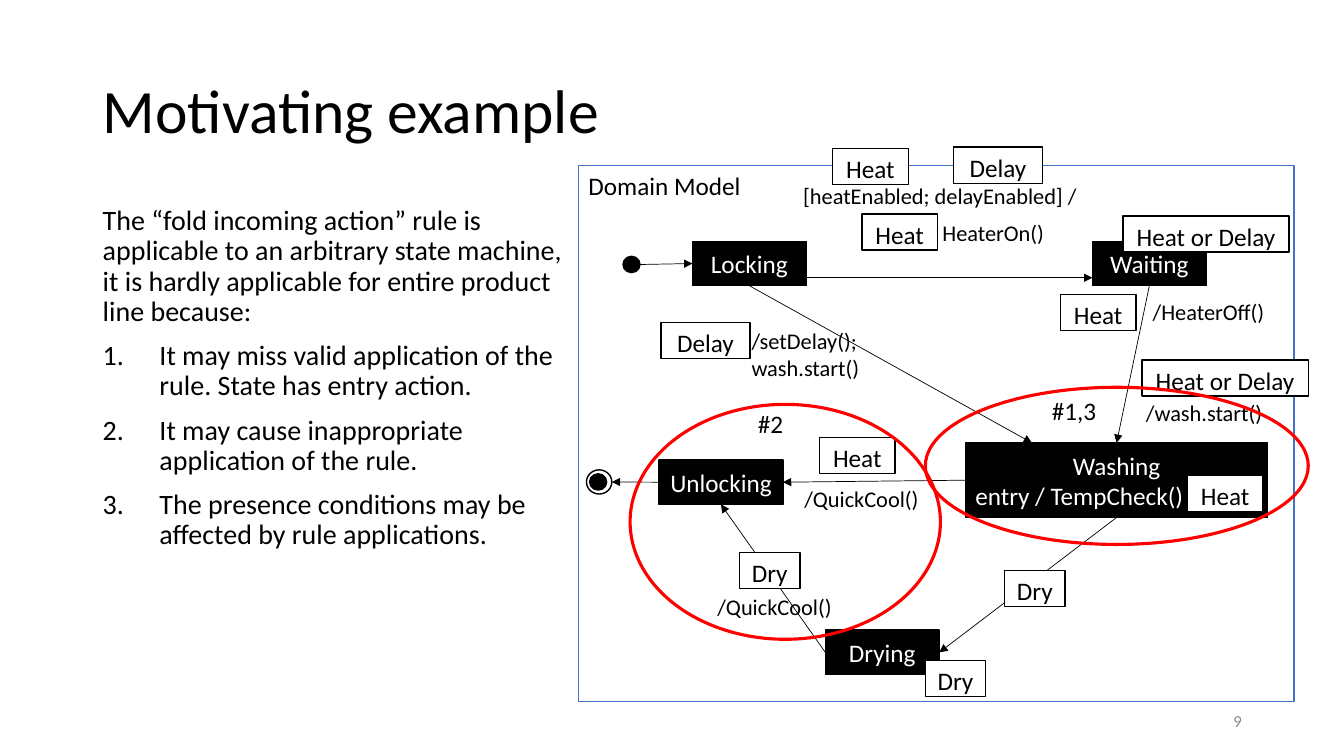
from collections import namedtuple

from lxml import etree
from pptx import Presentation
from pptx.dml.color import RGBColor
from pptx.enum.shapes import MSO_CONNECTOR, MSO_SHAPE
from pptx.enum.text import MSO_ANCHOR, PP_ALIGN
from pptx.oxml.ns import qn
from pptx.util import Cm, Pt

RECTANGLE, OVAL = MSO_SHAPE.RECTANGLE, MSO_SHAPE.OVAL
STRAIGHT = MSO_CONNECTOR.STRAIGHT
TOP, MIDDLE = MSO_ANCHOR.TOP, MSO_ANCHOR.MIDDLE
LEFT, CENTER, RIGHT = PP_ALIGN.LEFT, PP_ALIGN.CENTER, PP_ALIGN.RIGHT

BLACK = RGBColor(0x00, 0x00, 0x00)
WHITE = RGBColor(0xFF, 0xFF, 0xFF)
BLUE = RGBColor(0x44, 0x72, 0xC4)
RED = RGBColor(0xFF, 0x00, 0x00)
GREY = RGBColor(0x8C, 0x8C, 0x8C)
FONT = "Calibri"

# Boxes are in centimetres: left, top, width, height.
Box = namedtuple("Box", "left top width height")
TITLE_BOX = Box(2.34, 1.02, 29.21, 3.68)
BODY_BOX = Box(2.34, 5.08, 12.12, 12.09)
NUMBER_BOX = Box(23.93, 17.65, 7.62, 1.02)
MODEL_BOX = Box(14.58, 4.17, 18.03, 13.51)

INTRO = ("The “fold incoming action” rule is applicable to an arbitrary state machine, "
         "it is hardly applicable for entire product line because:")
REASONS = [
    "It may miss valid application of the rule. State has entry action.",
    "It may cause inappropriate application of the rule.",
    "The presence conditions may be affected by rule applications.",
]

# Everything below is placed relative to the domain model frame.
STATES = {
    "Locking": Box(1.13 * 2.54, 1.91, 2.87, 1.12),
    "Waiting": Box(12.95, 1.91, 2.87, 1.12),
    "Washing": Box(9.75, 6.99, 7.62, 1.88),
    "Drying": Box(6.22, 11.71, 2.87, 1.12),
    "Unlocking": Box(2.03, 7.42, 3.12, 1.12),
}
ENTRY_ACTIONS = {"Washing": "entry / TempCheck()"}
PSEUDO_STATES = {
    "Initial": (Box(1.12, 2.29, 0.43, 0.41), BLACK),
    "Final": (Box(0.2, 7.67, 0.64, 0.61), WHITE),
    "Final core": (Box(0.28, 7.77, 0.43, 0.41), BLACK),
}
# Each end is a state and the fraction of its width and height.
TRANSITIONS = [
    ("Initial", (1, 0.5), "Locking", (0, 0.5)),
    ("Locking", (1, 0.82), "Waiting", (0, 0.82)),
    ("Waiting", (0.5, 1), "Washing", (0.5, 0)),
    ("Locking", (0.5, 1), "Washing", (0.22, 0)),
    ("Unlocking", (0, 0.5), "Final", (1, 0.5)),
    ("Washing", (0.5, 1), "Drying", (1, 0.5)),
    ("Drying", (0, 0.5), "Unlocking", (0.5, 1)),
    ("Washing", (0, 0.5), "Unlocking", (1, 0.5)),
]
TAG_HEIGHT = 0.91
# Feature: tag width and the corners where its tag stands.
FEATURE_TAGS = {
    "Dry": (1.52, [(10.74, 10.21), (4.06, 9.75), (8.74, 12.47)]),
    "Heat": (1.91, [(7.14, 1.22), (6.07, 6.86), (15.34, 7.82), (12.14, 3.25), (6.4, -0.43)]),
    "Heat or Delay": (4.19, [(13.72, 1.27), (14.2, 4.9)]),
    "Delay": (2.24, [(2.08, 3.96), (9.45, -0.46)]),
}
LABELS = [
    (["/QuickCool()"], Box(3.25, 10.64, 3.61, 0.94), 16),
    (["/QuickCool()"], Box(5.44, 7.92, 3.61, 0.94), 16),
    (["HeaterOn()"], Box(8.92, 1.22, 3.61, 0.94), 16),
    (["/wash.start()"], Box(14.05, 5.77, 3.61, 0.94), 16),
    (["/HeaterOff()"], Box(14.22, 3.23, 3.61, 0.94), 16),
    (["/setDelay();", "wash.start()"], Box(4.11, 3.94, 3.61, 1.63), 16),
    (["[heatEnabled; delayEnabled] /"], Box(5.41, 0.3, 7.8, 0.94), 16),
    (["#1,3"], Box(11.68, 5.66, 1.75, 1.02), 18),
    (["#2"], Box(4.27, 5.99, 1.4, 1.02), 18),
]
HIGHLIGHTS = [Box(8.74, 5.59, 9.65, 3.96), Box(1.3, 6.02, 7.82, 5.92)]


def inside(frame, box):
    """Turn a box relative to the frame into one relative to the page."""
    return Box(frame.left + box.left, frame.top + box.top, box.width, box.height)


def lengths(box):
    return [Cm(value) for value in box]


def write(shape, lines, size, color=BLACK, align=LEFT, anchor=TOP, **spacing):
    """Fill the shape with one paragraph per line and return the paragraphs."""
    frame = shape.text_frame
    frame.word_wrap = True
    frame.vertical_anchor = anchor
    font_format = {"name": FONT, "size": Pt(size)}
    paragraph_format = {"alignment": align, **spacing}
    for index, line in enumerate(lines):
        para = frame.add_paragraph() if index else frame.paragraphs[0]
        for name, value in paragraph_format.items():
            setattr(para, name, value)
        span = para.add_run()
        span.text = line
        for name, value in font_format.items():
            setattr(span.font, name, value)
        span.font.color.rgb = color
    return frame.paragraphs


def add_text(page, box, lines, size, **text_format):
    return write(page.shapes.add_textbox(*lengths(box)), lines, size, **text_format)


def add_outline(page, kind, box, fill, line, width=1):
    shape = page.shapes.add_shape(kind, *lengths(box))
    shape.shadow.inherit = False
    if fill is None:
        shape.fill.background()
    else:
        shape.fill.solid()
        shape.fill.fore_color.rgb = fill
    shape.line.color.rgb = line
    shape.line.width = Pt(width)
    return shape


def add_arrow(page, start, end):
    arrow = page.shapes.add_connector(STRAIGHT, *lengths(start + end))
    arrow.line.color.rgb = BLACK
    arrow.line.width = Pt(0.5)
    etree.SubElement(arrow.line._get_or_add_ln(), qn("a:tailEnd"), type="triangle")
    etree.SubElement(arrow._element.spPr, qn("a:effectLst"))


def point_on(box, fraction):
    return (box.left + box.width * fraction[0], box.top + box.height * fraction[1])


def add_body(page, box):
    paras = add_text(page, box, [INTRO, *REASONS], 20, line_spacing=0.9, space_before=Pt(10))
    indent = Cm(1.43)
    for para in paras[1:]:
        properties = para._p.get_or_add_pPr()
        properties.set("marL", str(indent))
        properties.set("indent", str(-indent))
        etree.SubElement(properties, qn("a:buFont"), typeface="+mj-lt")
        etree.SubElement(properties, qn("a:buAutoNum"), type="arabicPeriod")


def add_states(page, frame):
    """Draw the states and return the page box of each by name."""
    places = {}
    for name, (box, fill) in PSEUDO_STATES.items():
        places[name] = inside(frame, box)
        add_outline(page, OVAL, places[name], fill, BLACK)
    for name, box in STATES.items():
        places[name] = inside(frame, box)
        lines = [name]
        if name in ENTRY_ACTIONS:
            lines.append(ENTRY_ACTIONS[name])
        state = add_outline(page, RECTANGLE, places[name], BLACK, BLACK)
        paras = write(state, lines, 18, color=WHITE, align=CENTER, anchor=MIDDLE)
        for para in paras[1:]:
            para.alignment = LEFT
    return places


def add_domain_model(page, frame):
    write(add_outline(page, RECTANGLE, frame, WHITE, BLUE), ["Domain Model"], 18)
    places = add_states(page, frame)
    for source, leaving, target, entering in TRANSITIONS:
        add_arrow(page, point_on(places[source], leaving), point_on(places[target], entering))
    for feature, (width, corners) in FEATURE_TAGS.items():
        for corner in corners:
            box = inside(frame, Box(*corner, width, TAG_HEIGHT))
            write(add_outline(page, RECTANGLE, box, WHITE, BLACK), [feature], 18, align=CENTER)
    for lines, box, size in LABELS:
        add_text(page, inside(frame, box), lines, size)
    for box in HIGHLIGHTS:
        add_outline(page, OVAL, inside(frame, box), None, RED, 2.25)


def main():
    deck = Presentation()
    deck.slide_width, deck.slide_height = Cm(33.87), Cm(19.05)
    page = deck.slides.add_slide(deck.slide_layouts[6])
    add_text(page, TITLE_BOX, ["Motivating example"], 44, anchor=MIDDLE, line_spacing=0.9)
    add_body(page, BODY_BOX)
    add_text(page, NUMBER_BOX, ["9"], 12, color=GREY, align=RIGHT, anchor=MIDDLE)
    add_domain_model(page, MODEL_BOX)
    deck.save("out.pptx")


if __name__ == "__main__":
    main()
